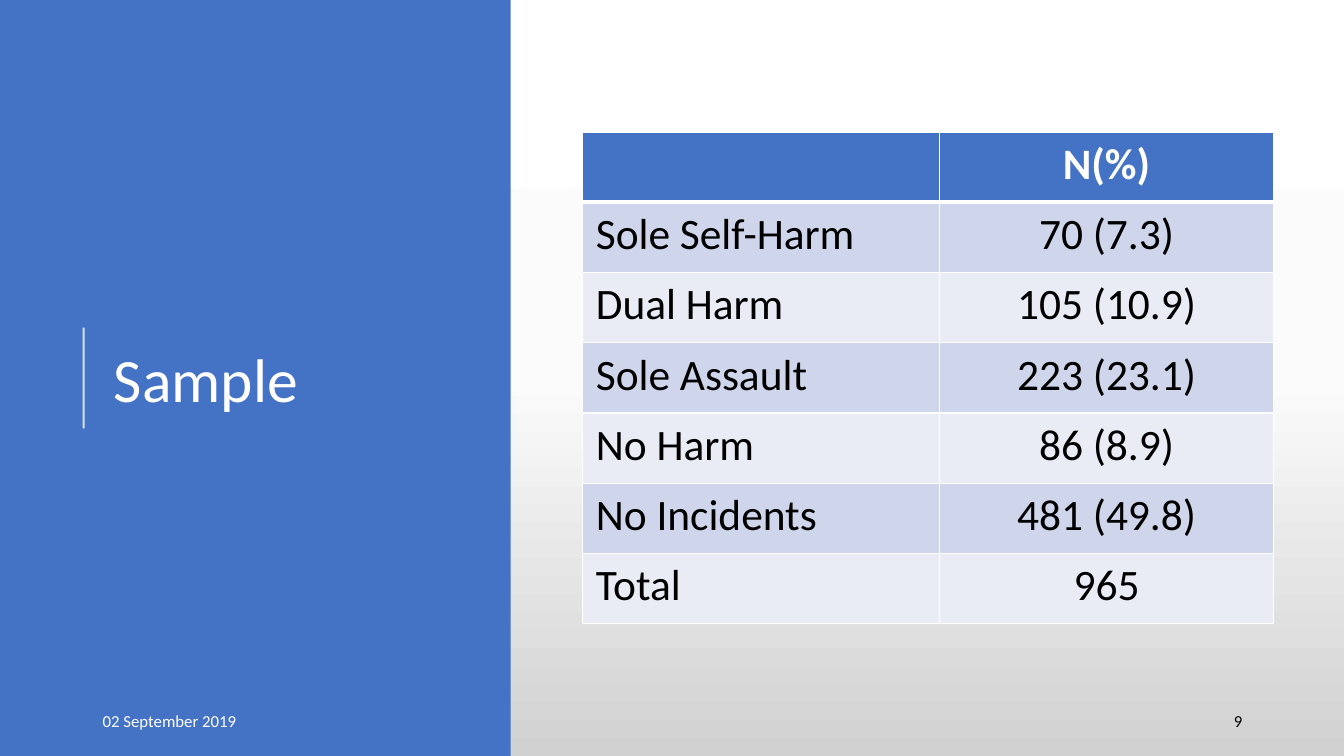
from copy import deepcopy
from dataclasses import dataclass

from lxml import etree
from pptx import Presentation
from pptx import util as u
from pptx.dml.color import RGBColor
from pptx.enum import shapes, text
from pptx.oxml.ns import qn
from pptx.slide import Slide
from pptx.table import _Cell as Cell

WIDTH, HEIGHT = u.Inches(13.33), u.Inches(7.5)
FONT = "Calibri"
WHITE = RGBColor(0xFF, 0xFF, 0xFF)
BLACK = RGBColor(0, 0, 0)
BLUE = RGBColor(0x44, 0x72, 0xC4)
BAND_DARK = RGBColor(0xCF, 0xD5, 0xEA)
BAND_LIGHT = RGBColor(0xE9, 0xEB, 0xF5)
BACKDROP = [(0, WHITE), (0.5, RGBColor(0xFB, 0xFB, 0xFB)), (1, RGBColor(0xD1, 0xD1, 0xD1))]

PANEL_SHARE = 0.38
COLUMN_WIDTHS = [u.Inches(3.54), u.Inches(3.31)]
ROW_HEIGHT = u.Inches(0.697)
SAMPLE_ROWS = [
    ("", "N(%)"),
    ("Sole Self-Harm", "70 (7.3)"),
    ("Dual Harm", "105 (10.9)"),
    ("Sole Assault", "223 (23.1)"),
    ("No Harm", "86 (8.9)"),
    ("No Incidents", "481 (49.8)"),
    ("Total", "965"),
]


@dataclass
class Label:
    """Text box placed in inches."""
    words: str
    left: float
    top: float
    width: float
    height: float
    size: int
    color: RGBColor = WHITE
    align: text.PP_ALIGN = text.PP_ALIGN.LEFT
    line_spacing: float = 1.0
    space_after: int = 0


LABELS = [
    Label("Sample", 1.03, 0.78, 3.69, 6.02, 44, line_spacing=0.9),
    Label("02 September 2019", 0.92, 6.95, 3, 0.4, 12, space_after=6),
    Label("9", 9.42, 6.95, 3, 0.4, 12, BLACK, text.PP_ALIGN.RIGHT, space_after=6),
]


def paint_background(page: Slide) -> None:
    fill = page.background.fill
    fill.gradient()
    fill.gradient_angle = 270
    stop_list = page.element.find(".//" + qn("a:gsLst"))
    stop_list.append(deepcopy(stop_list[0]))
    for stop, (position, color) in zip(fill.gradient_stops, BACKDROP):
        stop.position = position
        stop.color.rgb = color


def style_paragraph(para, size: int, color: RGBColor, bold: bool = False) -> None:
    for span in para.runs:
        span.font.name = FONT
        span.font.size = u.Pt(size)
        span.font.color.rgb = color
        span.font.bold = bold


def add_panel(page: Slide) -> None:
    panel = page.shapes.add_shape(
        shapes.MSO_SHAPE.RECTANGLE, 0, 0, int(WIDTH * PANEL_SHARE), HEIGHT)
    panel.shadow.inherit = False
    panel.fill.solid()
    panel.fill.fore_color.rgb = BLUE
    panel.line.fill.background()


def add_title_rule(page: Slide) -> None:
    left = u.Inches(0.83)
    rule = page.shapes.add_connector(
        shapes.MSO_CONNECTOR.STRAIGHT, left, u.Inches(4.25), left, u.Inches(3.25))
    rule.line.width = u.Pt(1.5)
    rule.line.color.rgb = WHITE
    properties = rule.element.spPr
    color = properties.find(".//" + qn("a:srgbClr"))
    etree.SubElement(color, qn("a:alpha"), val="80000")
    etree.SubElement(properties, qn("a:effectLst"))


def add_label(page: Slide, label: Label) -> None:
    box = page.shapes.add_textbox(
        *map(u.Inches, (label.left, label.top, label.width, label.height)))
    frame = box.text_frame
    frame.text = label.words
    frame.word_wrap = True
    frame.vertical_anchor = text.MSO_ANCHOR.MIDDLE
    para = frame.paragraphs[0]
    para.alignment = label.align
    para.line_spacing = label.line_spacing
    para.space_after = u.Pt(label.space_after)
    style_paragraph(para, label.size, label.color)


def add_borders(cell: Cell, bottom: float, top: float) -> None:
    """Draw white cell borders; widths are in points."""
    properties = cell._tc.get_or_add_tcPr()
    sides = {"a:lnL": 1, "a:lnR": 1, "a:lnT": top, "a:lnB": bottom}
    for position, (side, width) in enumerate(sides.items()):
        border = etree.Element(qn(side), w=str(u.Pt(width)))
        fill = etree.SubElement(border, qn("a:solidFill"))
        etree.SubElement(fill, qn("a:srgbClr"), val=str(WHITE))
        properties.insert(position, border)


def add_sample_table(page: Slide) -> None:
    grid = page.shapes.add_table(
        len(SAMPLE_ROWS), len(COLUMN_WIDTHS), u.Inches(5.78), u.Inches(1.31),
        sum(COLUMN_WIDTHS), ROW_HEIGHT * len(SAMPLE_ROWS)).table
    for column, width in zip(grid.columns, COLUMN_WIDTHS):
        column.width = width
    for row, values in enumerate(SAMPLE_ROWS):
        grid.rows[row].height = ROW_HEIGHT
        header = row == 0
        band = BLUE if header else BAND_DARK if row % 2 else BAND_LIGHT
        for column, value in enumerate(values):
            cell = grid.cell(row, column)
            cell.text_frame.text = value
            cell.margin_left = cell.margin_right = u.Inches(0.13)
            cell.margin_top = cell.margin_bottom = u.Inches(0.06)
            cell.fill.solid()
            cell.fill.fore_color.rgb = band
            add_borders(cell, bottom=3 if header else 1, top=3 if row == 1 else 1)
            para = cell.text_frame.paragraphs[0]
            para.alignment = text.PP_ALIGN.CENTER if column else text.PP_ALIGN.LEFT
            style_paragraph(para, 31, WHITE if header else BLACK, header)


def main() -> None:
    deck = Presentation()
    deck.slide_width, deck.slide_height = WIDTH, HEIGHT
    page = deck.slides.add_slide(deck.slide_layouts[6])
    paint_background(page)
    add_panel(page)
    add_title_rule(page)
    add_sample_table(page)
    for label in LABELS:
        add_label(page, label)
    deck.save("out.pptx")


if __name__ == "__main__":
    main()
